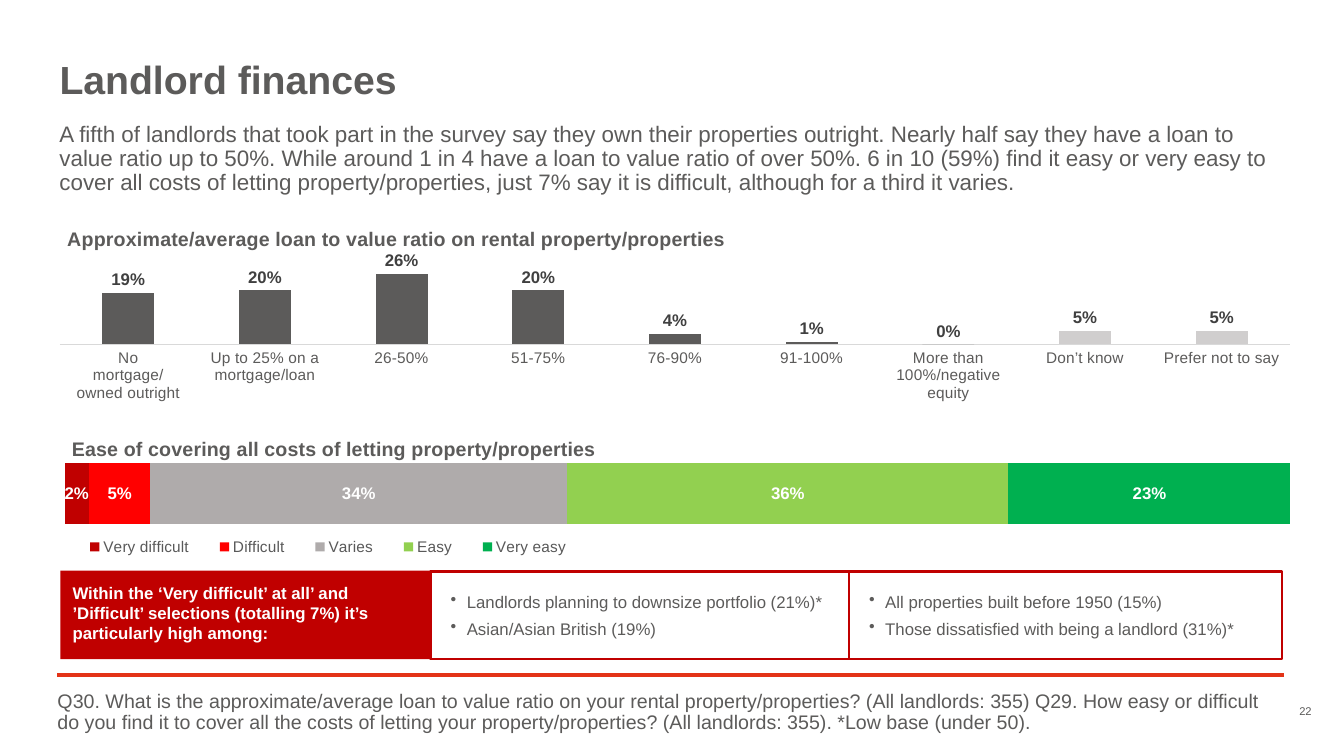
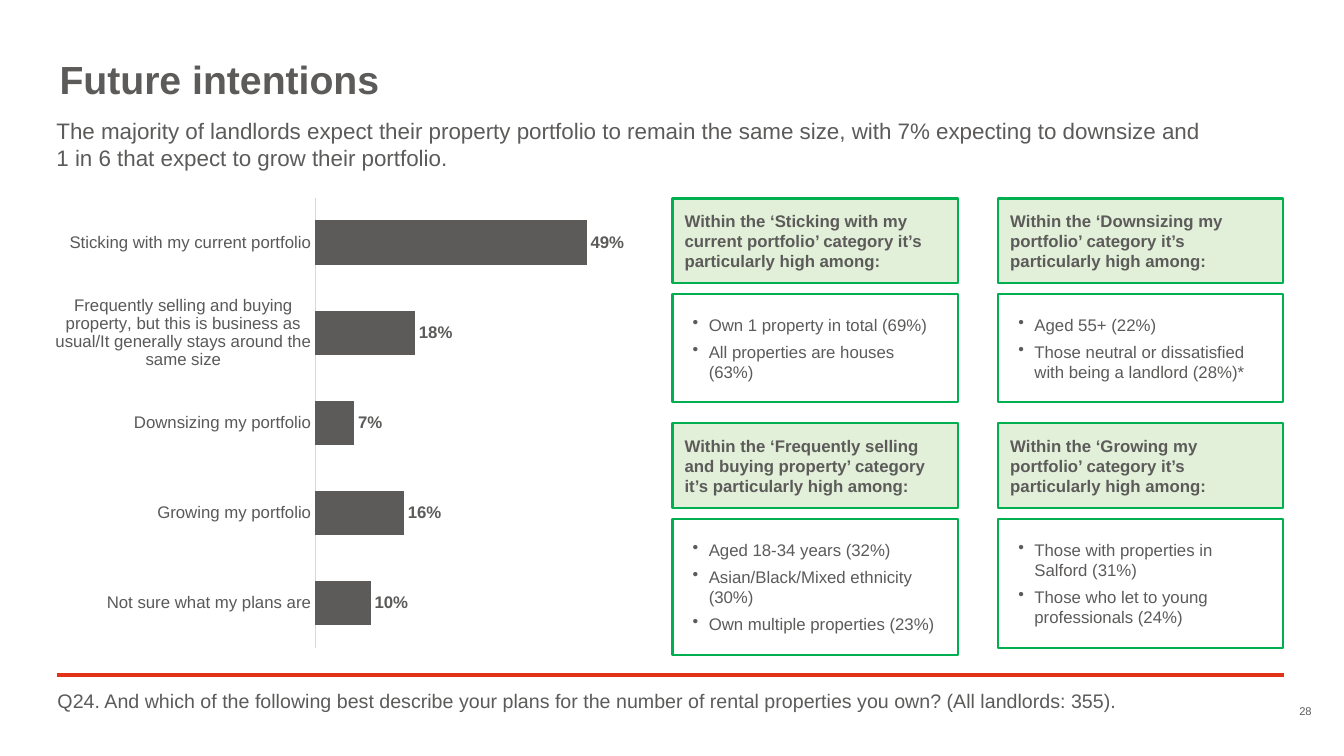
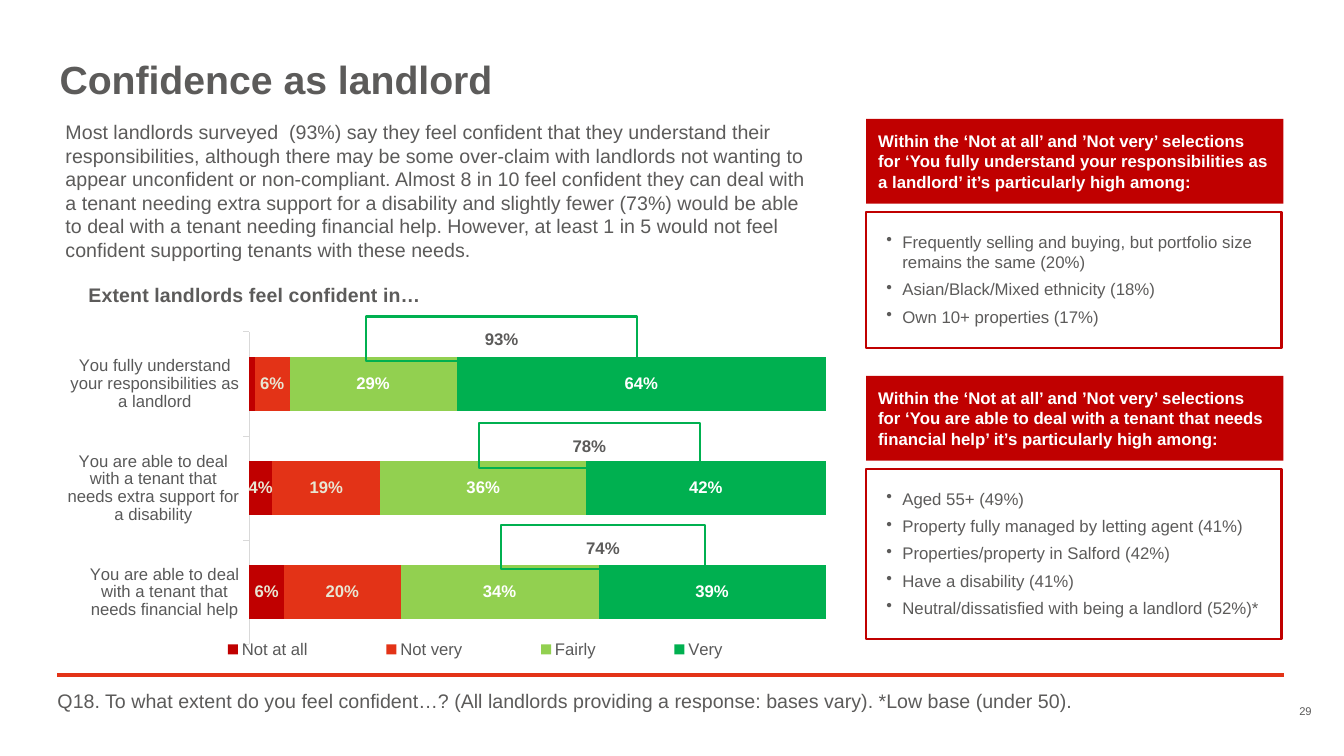
import pptx
import pptx.chart.data
import pptx.dml.color
import pptx.enum.chart
import pptx.enum.shapes
import pptx.enum.text
import pptx.oxml
import pptx.oxml.ns
import pptx.util
from pptx.util import Inches

FONT = "Arial"
GREY, LEGEND_GREY, AXIS_GREY, LABEL_GREY = "5C5B5A", "595959", "D9D9D9", "404040"
PALE_GREY, MID_GREY = "D0CECE", "AFABAB"
RED, BRIGHT_RED, RULE_RED = "C00000", "FF0000", "E33317"
GREEN, LIME, PALE_GREEN = "00B050", "92D050", "E2F0D9"
WHITE, CREAM = "FFFFFF", "E8E6D3"

CHART_TYPE = pptx.enum.chart.XL_CHART_TYPE
LABEL_POSITION = pptx.enum.chart.XL_LABEL_POSITION
TICK_MARK = pptx.enum.chart.XL_TICK_MARK
ALIGN = pptx.enum.text.PP_ALIGN
ANCHOR = pptx.enum.text.MSO_ANCHOR


def rgb(hex_colour):
    return pptx.dml.color.RGBColor.from_string(hex_colour)


def style_font(font, size, colour=GREY, bold=False):
    font.name = FONT
    font.size = pptx.util.Pt(size)
    font.bold = bold
    font.color.rgb = rgb(colour)


def fill_frame(frame, paragraphs, size, colour=GREY, bold=False, inset=0.0,
               align=ALIGN.LEFT, spacing=1.0, anchor=ANCHOR.TOP):
    """Write one paragraph per string, all in the same style."""
    frame.word_wrap = True
    frame.auto_size = pptx.enum.text.MSO_AUTO_SIZE.NONE
    frame.vertical_anchor = anchor
    frame.margin_left = frame.margin_right = Inches(inset)
    frame.margin_top = frame.margin_bottom = Inches(inset)
    frame.text = "\n".join(paragraphs)
    for paragraph in frame.paragraphs:
        paragraph.alignment = align
        paragraph.line_spacing = spacing
        paragraph.space_before = pptx.util.Pt(0)
        for run in paragraph.runs:
            style_font(run.font, size, colour, bold)


def set_bullet(paragraph, char=None, indent=0.0):
    """Give the paragraph a hanging bullet, or none when char is missing."""
    properties = paragraph._p.get_or_add_pPr()
    properties.set("marL", str(Inches(indent)))
    properties.set("indent", str(-Inches(indent)))
    tag = "a:buChar" if char else "a:buNone"
    bullet = pptx.oxml.parse_xml(f"<{tag} {pptx.oxml.ns.nsdecls('a')}/>")
    if char:
        bullet.set("char", char)
    properties.append(bullet)


def move(shape, left, top, width, height):
    shape.left, shape.top = Inches(left), Inches(top)
    shape.width, shape.height = Inches(width), Inches(height)


def add_text(slide, at, text, size, **style):
    box = slide.shapes.add_textbox(*map(Inches, at))
    fill_frame(box.text_frame, [text], size, **style)


def add_box(slide, at, fill=None, line=None):
    box = slide.shapes.add_shape(pptx.enum.shapes.MSO_SHAPE.RECTANGLE, *map(Inches, at))
    box.shadow.inherit = False
    if fill:
        box.fill.solid()
        box.fill.fore_color.rgb = rgb(fill)
    else:
        box.fill.background()
    if line:
        box.line.color.rgb = rgb(line)
        box.line.width = pptx.util.Pt(1.5)
    else:
        box.line.fill.background()
    return box


def add_heading_box(slide, at, text, fill, line=None, colour=GREY):
    box = add_box(slide, at, fill, line)
    fill_frame(box.text_frame, [text], 12, colour, bold=True, inset=0.12)


def add_bullet_box(slide, at, items, line):
    frame = add_box(slide, at, line=line).text_frame
    fill_frame(frame, items, 12, inset=0.2)
    for paragraph in frame.paragraphs:
        paragraph.space_after = pptx.util.Pt(5)
        set_bullet(paragraph, "•", 0.16)


def add_total_box(slide, at, text):
    box = add_box(slide, at, line=GREEN)
    fill_frame(box.text_frame, [text], 12, bold=True, inset=0.12, align=ALIGN.CENTER)


def add_page(prs, title, footnote, number):
    """Add a slide with the headline, red rule, footnote and page number."""
    slide = prs.slides.add_slide(prs.slide_layouts[1])
    headline, source_note = slide.shapes.title, slide.placeholders[1]
    move(headline, 0.59, 0.6, 12.14, 0.58)
    fill_frame(headline.text_frame, [title], 28, bold=True, spacing=0.9)
    move(source_note, 0.57, 6.86, 12.16, 0.45)
    fill_frame(source_note.text_frame, [footnote], 14, spacing=0.9)
    set_bullet(source_note.text_frame.paragraphs[0])

    rule = slide.shapes.add_connector(
        pptx.enum.shapes.MSO_CONNECTOR.STRAIGHT,
        Inches(0.57), Inches(6.7), Inches(12.73), Inches(6.7))
    rule.line.color.rgb = rgb(RULE_RED)
    rule.line.width = pptx.util.Pt(3)
    rule._element.spPr.append(
        pptx.oxml.parse_xml(f"<a:effectLst {pptx.oxml.ns.nsdecls('a')}/>"))
    add_text(slide, (12.62, 6.99, 0.39, 0.13), str(number), 8,
             align=ALIGN.RIGHT, anchor=ANCHOR.BOTTOM)
    return slide


def place_part(part, index, fractions, inner=False):
    """Fix a chart part at x, y (and w, h) as fractions of the chart."""
    settings = '<c:layoutTarget val="inner"/>' if inner else ""
    settings += '<c:xMode val="edge"/><c:yMode val="edge"/>'
    settings += "".join(f'<c:{name} val="{value}"/>' for name, value in zip("xywh", fractions))
    layout = pptx.oxml.parse_xml(
        f"<c:layout {pptx.oxml.ns.nsdecls('c')}>"
        f"<c:manualLayout>{settings}</c:manualLayout></c:layout>")
    for old in part.findall(pptx.oxml.ns.qn("c:layout")):
        part.remove(old)
    part.insert(index, layout)


def add_bars(slide, at, kind, categories, series, plot_area, gap, overlap=None,
             axis_size=None, axis_colour=LEGEND_GREY, axis_max=None,
             tick=TICK_MARK.NONE, label_position=LABEL_POSITION.CENTER):
    """Add a bar chart; series holds (name, values, bar colour, label colour)."""
    data = pptx.chart.data.CategoryChartData(number_format="0%")
    data.categories = categories
    for name, values, _, _ in series:
        data.add_series(name, values)
    chart = slide.shapes.add_chart(kind, *map(Inches, at), data).chart
    chart.has_title = chart.has_legend = False
    style_font(chart.font, 10, "000000")

    value_axis, category_axis = chart.value_axis, chart.category_axis
    value_axis.has_major_gridlines = False
    value_axis.visible = False
    if axis_max:
        value_axis.minimum_scale, value_axis.maximum_scale = 0, axis_max
    if axis_size:
        category_axis.major_tick_mark = tick
        category_axis.minor_tick_mark = TICK_MARK.NONE
        category_axis.format.line.color.rgb = rgb(AXIS_GREY)
        category_axis.format.line.width = pptx.util.Pt(0.75)
        style_font(category_axis.tick_labels.font, axis_size, axis_colour)
    else:
        category_axis.visible = False

    plot = chart.plots[0]
    plot.vary_by_categories = False
    plot.gap_width = gap
    if overlap is not None:
        plot.overlap = overlap
    for bars, (_, _, bar_colour, label_colour) in zip(plot.series, series):
        bars.format.fill.solid()
        bars.format.fill.fore_color.rgb = rgb(bar_colour)
        labels = bars.data_labels
        labels.show_value = True
        labels.number_format, labels.number_format_is_linked = "0%", False
        labels.position = label_position
        style_font(labels.font, 12, label_colour, bold=True)
    place_part(chart._chartSpace.chart.plotArea, 0, plot_area, inner=True)
    return chart


def add_chart_title(chart, text, position):
    frame = chart.chart_title.text_frame
    frame.text = text
    style_font(frame.paragraphs[0].runs[0].font, 14, bold=True)
    place_part(chart.chart_title._element, 1, position)


def add_legend(chart, size, area):
    chart.has_legend = True
    chart.legend.position = pptx.enum.chart.XL_LEGEND_POSITION.BOTTOM
    chart.legend.include_in_layout = False
    style_font(chart.legend.font, size, LEGEND_GREY)
    place_part(chart.legend._element, 1, area)


def hide_label(bars, index):
    label = pptx.oxml.parse_xml(
        f"<c:dLbl {pptx.oxml.ns.nsdecls('c')}>"
        f'<c:idx val="{index}"/><c:delete val="1"/></c:dLbl>')
    bars.data_labels._element.insert(0, label)


def build_finances(prs):
    slide = add_page(
        prs, "Landlord finances",
        "Q30. What is the approximate/average loan to value ratio on your rental "
        "property/properties? (All landlords: 355) Q29. How easy or difficult do you find it to "
        "cover all the costs of letting your property/properties? (All landlords: 355). "
        "*Low base (under 50).", 22)
    add_text(
        slide, (0.59, 1.22, 12.14, 0.81),
        "A fifth of landlords that took part in the survey say they own their properties "
        "outright. Nearly half say they have a loan to value ratio up to 50%. While around 1 in 4 "
        "have a loan to value ratio of over 50%. 6 in 10 (59%) find it easy or very easy to cover "
        "all costs of letting property/properties, just 7% say it is difficult, although for a "
        "third it varies.", 16, spacing=0.9)

    ratios = add_bars(
        slide, (0.57, 2.05, 12.3, 2.03), CHART_TYPE.COLUMN_CLUSTERED,
        ["No mortgage/owned outright", "Up to 25% on a mortgage/loan", "26-50%", "51-75%",
         "76-90%", "91-100%", "More than 100%/negative equity", "Don’t know",
         "Prefer not to say"],
        [("Series 1", [0.19, 0.2, 0.26, 0.2, 0.04, 0.01, 0, 0.05, 0.05], GREY, LABEL_GREY)],
        (0.002, 0.277, 0.992, 0.397), gap=164, overlap=-94, axis_size=11, axis_colour=GREY,
        axis_max=0.3, label_position=LABEL_POSITION.OUTSIDE_END)
    for index in (7, 8):
        no_answer = ratios.plots[0].series[0].points[index].format.fill
        no_answer.solid()
        no_answer.fore_color.rgb = rgb(PALE_GREY)
    add_chart_title(
        ratios, "Approximate/average loan to value ratio on rental property/properties",
        (0.005, 0.08))

    ease = add_bars(
        slide, (0.64, 3.99, 12.16, 1.66), CHART_TYPE.BAR_STACKED_100, ["1"],
        [("Very difficult", [0.02], RED, WHITE), ("Difficult", [0.05], BRIGHT_RED, WHITE),
         ("Varies", [0.34], MID_GREY, WHITE), ("Easy", [0.36], LIME, WHITE),
         ("Very easy", [0.23], GREEN, WHITE)],
        (0, 0.09, 1, 0.91), gap=150, overlap=100)
    add_chart_title(ease, "Ease of covering all costs of letting property/properties",
                    (0.003, 0.18))
    add_legend(ease, 11, (0, 0.8, 0.43, 0.13))

    add_heading_box(
        slide, (0.6, 5.66, 3.67, 0.88),
        "Within the ‘Very difficult’ at all’ and ’Difficult’ selections (totalling 7%) it’s "
        "particularly high among:", RED, colour=WHITE)
    add_bullet_box(slide, (4.27, 5.67, 4.15, 0.87),
                   ["Landlords planning to downsize portfolio (21%)*",
                    "Asian/Asian British (19%)"], RED)
    add_bullet_box(slide, (8.42, 5.67, 4.3, 0.87),
                   ["All properties built before 1950 (15%)",
                    "Those dissatisfied with being a landlord (31%)*"], RED)


def build_intentions(prs):
    slide = add_page(
        prs, "Future intentions",
        "Q24. And which of the following best describe your plans for the number of rental "
        "properties you own? (All landlords: 355).", 28)
    add_text(
        slide, (0.56, 1.16, 11.47, 0.54),
        "The majority of landlords expect their property portfolio to remain the same size, with "
        "7% expecting to downsize and 1 in 6 that expect to grow their portfolio.", 16)
    plans = add_bars(
        slide, (0.46, 1.73, 6.46, 4.73), CHART_TYPE.BAR_CLUSTERED,
        ["Sticking with my current portfolio",
         "Frequently selling and buying property, but this is business as usual/It generally "
         "stays around the same size",
         "Downsizing my portfolio", "Growing my portfolio", "Not sure what my plans are"],
        [("Series 1", [0.49, 0.18, 0.07, 0.16, 0.1], GREY, GREY)],
        (0.413, 0.049, 0.51, 0.945), gap=102, axis_size=12, axis_max=0.6,
        label_position=LABEL_POSITION.OUTSIDE_END)
    plans.category_axis.reverse_order = True

    groups = [
        ("Sticking with my current portfolio", 1.07,
         ["Own 1 property in total (69%)", "All properties are houses (63%)"]),
        ("Downsizing my portfolio", 1.07,
         ["Aged 55+ (22%)", "Those neutral or dissatisfied with being a landlord (28%)*"]),
        ("Frequently selling and buying property", 1.35,
         ["Aged 18-34 years (32%)", "Asian/Black/Mixed ethnicity (30%)",
          "Own multiple properties (23%)"]),
        ("Growing my portfolio", 1.28,
         ["Those with properties in Salford (31%)",
          "Those who let to young professionals (24%)"]),
    ]
    for index, (category, height, items) in enumerate(groups):
        row, column = divmod(index, 2)
        left, top = 6.67 + 3.23 * column, 1.97 + 2.23 * row
        add_heading_box(slide, (left, top, 2.83, 0.84),
                        f"Within the ‘{category}’ category it’s particularly high among:",
                        PALE_GREEN, GREEN)
        add_bullet_box(slide, (left, top + 0.95, 2.83, height), items, GREEN)


def build_confidence(prs):
    slide = add_page(
        prs, "Confidence as landlord",
        "Q18. To what extent do you feel confident…? (All landlords providing a response: bases "
        "vary). *Low base (under 50).", 29)
    add_text(
        slide, (0.65, 1.19, 7.36, 1.41),
        "Most landlords surveyed  (93%) say they feel confident that they understand their "
        "responsibilities, although there may be some over-claim with landlords not wanting to "
        "appear unconfident or non-compliant. Almost 8 in 10 feel confident they can deal with a "
        "tenant needing extra support for a disability and slightly fewer (73%) would be able to "
        "deal with a tenant needing financial help. However, at least 1 in 5 would not feel "
        "confident supporting tenants with these needs.", 14)
    confidence = add_bars(
        slide, (0.67, 2.6, 7.52, 4.2), CHART_TYPE.BAR_STACKED_100,
        ["You are able to deal with a tenant that needs financial help",
         "You are able to deal with a tenant that needs extra support for a disability",
         "You fully understand your responsibilities as a landlord"],
        [("Not at all", [0.06, 0.04, 0.01], RED, CREAM),
         ("Not very", [0.2, 0.19, 0.06], RULE_RED, CREAM),
         ("Fairly", [0.34, 0.36, 0.29], LIME, WHITE),
         ("Very", [0.39, 0.42, 0.64], GREEN, WHITE)],
        (0.235, 0.165, 0.765, 0.738), gap=91, overlap=100, axis_size=12,
        tick=TICK_MARK.OUTSIDE)
    hide_label(confidence.plots[0].series[0], 2)
    add_chart_title(confidence, "Extent landlords feel confident in…", (0.017, 0.04))
    add_legend(confidence, 12, (0.11, 0.88, 0.85, 0.07))

    for left, top, width, total in [(3.63, 3.14, 2.69, "93%"), (4.75, 4.2, 2.19, "78%"),
                                    (4.97, 5.21, 2.02, "74%")]:
        add_total_box(slide, (left, top, width, 0.44), total)

    groups = [
        (1.18, 1.35, "You fully understand your responsibilities as a landlord",
         ["Frequently selling and buying, but portfolio size remains the same (20%)",
          "Asian/Black/Mixed ethnicity (18%)", "Own 10+ properties (17%)"]),
        (3.73, 1.69, "You are able to deal with a tenant that needs financial help",
         ["Aged 55+ (49%)", "Property fully managed by letting agent (41%)",
          "Properties/property in Salford (42%)", "Have a disability (41%)",
          "Neutral/dissatisfied with being a landlord (52%)*"]),
    ]
    for top, height, statement, items in groups:
        add_heading_box(slide, (8.59, top, 4.14, 0.84),
                        "Within the ‘Not at all’ and ’Not very’ selections for "
                        f"‘{statement}’ it’s particularly high among:", RED, colour=WHITE)
        add_bullet_box(slide, (8.59, top + 0.92, 4.12, height), items, RED)


def main():
    prs = pptx.Presentation()
    prs.slide_width, prs.slide_height = Inches(13.33), Inches(7.5)
    build_finances(prs)
    build_intentions(prs)
    build_confidence(prs)
    prs.save("out.pptx")


if __name__ == "__main__":
    main()
